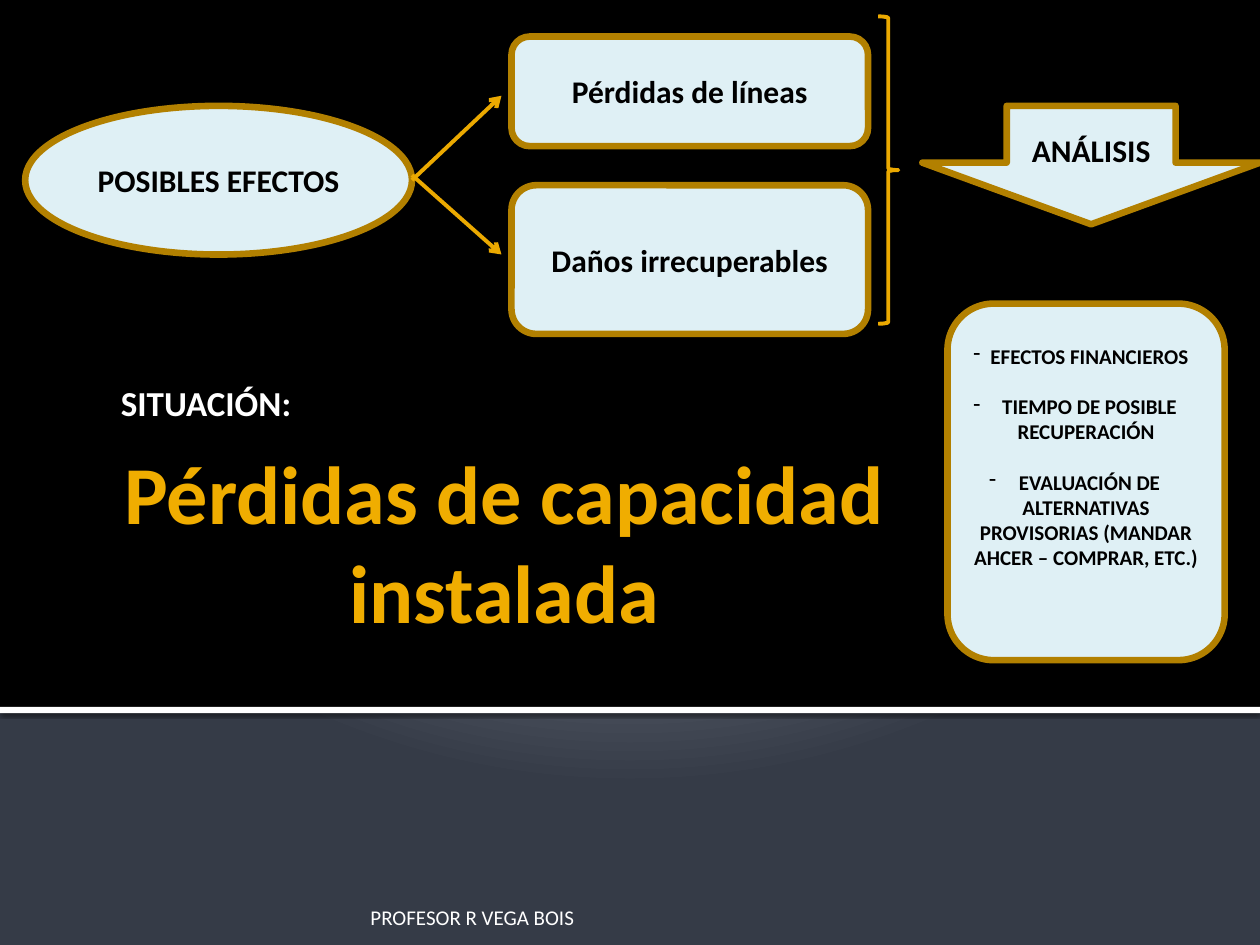
"""Build the slide on loss of installed capacity and its possible effects."""
import pptx
import pptx.dml.color
import pptx.enum.shapes
import pptx.enum.text
import pptx.oxml
import pptx.util
from pptx.util import Inches

COLORS = {
    "black": "000000", "white": "FFFFFF", "pale": "DFF0F5", "bronze": "B28000",
    "gold": "EBA900", "title": "F0AD00",
}
GRADIENT = [(0, "C1C5D3"), (12, "C1C5D3"), (20, "BFC4D2"), (100, "353B47")]
SHAPE = pptx.enum.shapes.MSO_SHAPE
ALIGN = pptx.enum.text.PP_ALIGN
ANCHOR = pptx.enum.text.MSO_ANCHOR
NAMESPACE = 'xmlns:a="http://schemas.openxmlformats.org/drawingml/2006/main"'


def rgb(name):
    return pptx.dml.color.RGBColor.from_string(COLORS[name])


def element(xml):
    """Parse a drawing element written without its namespace declaration."""
    head, mark, rest = xml.partition(">")
    if head.endswith("/"):
        head, mark = head[:-1], "/>"
    return pptx.oxml.parse_xml(f"{head} {NAMESPACE}{mark}{rest}")


def set_background(page):
    fill = page.background.fill
    fill.solid()
    solid = page.background._cSld.bg.bgPr[0]
    stops = "".join(
        f'<a:gs pos="{place * 1000}"><a:srgbClr val="{color}"/></a:gs>'
        for place, color in GRADIENT
    )
    gradient = element(
        f'<a:gradFill><a:gsLst>{stops}</a:gsLst><a:path path="circle">'
        '<a:fillToRect l="10000" t="-25000" r="10000" b="125000"/>'
        "</a:path></a:gradFill>"
    )
    solid.getparent().replace(solid, gradient)


def write_text(box, text, size=18, color="black", bold=True, align=ALIGN.CENTER,
               anchor=ANCHOR.MIDDLE, insets=(0.1, 0.05, 0.1, 0.05), bullet=None, gap=0):
    """Fill a box with one paragraph per line of text."""
    frame = box.text_frame
    frame.word_wrap = True
    frame.vertical_anchor = anchor
    (frame.margin_left, frame.margin_top,
     frame.margin_right, frame.margin_bottom) = map(Inches, insets)
    for index, line in enumerate(text.split("\n")):
        para = frame.add_paragraph() if index else frame.paragraphs[0]
        para.alignment = align
        if index and gap:
            para.space_before = pptx.util.Pt(gap)
        if bullet:
            para._p.get_or_add_pPr().append(element(f'<a:buChar char="{bullet}"/>'))
        span = para.add_run()
        span.text = line
        span.font.name = "Calibri"
        span.font.size = pptx.util.Pt(size)
        span.font.bold = bold
        span.font.color.rgb = rgb(color)


def add_shape(page, kind, place, fill=None, line=None, width=3.78):
    shape = page.shapes.add_shape(kind, *map(Inches, place))
    shape.shadow.inherit = False
    if fill:
        shape.fill.solid()
        shape.fill.fore_color.rgb = rgb(fill)
    else:
        shape.fill.background()
    if line:
        shape.line.color.rgb = rgb(line)
        shape.line.width = pptx.util.Pt(width)
    else:
        shape.line.fill.background()
    return shape


def add_node(page, kind, place, text, **style):
    node = add_shape(page, kind, place, "pale", "bronze")
    write_text(node, text, **style)
    return node


def add_label(page, place, text, **style):
    write_text(page.shapes.add_textbox(*map(Inches, place)), text, **style)


def add_arrow(page, start, end):
    arrow = page.shapes.add_connector(
        pptx.enum.shapes.MSO_CONNECTOR.STRAIGHT, *map(Inches, start + end))
    arrow.line.color.rgb = rgb("gold")
    arrow.line.width = pptx.util.Pt(2.25)
    arrow.line._get_or_add_ln().append(element('<a:tailEnd type="arrow"/>'))
    arrow._element.spPr.append(element("<a:effectLst/>"))


def add_panel(page):
    """Draw the upper black panel and its shadowed white edge."""
    add_shape(page, SHAPE.RECTANGLE, (0, 0, 10, 5.62), "black")
    edge = add_shape(page, SHAPE.RECTANGLE, (0, 5.61, 10, 0.05), "white")
    edge._element.spPr.find(pptx.oxml.ns.qn("a:effectLst")).append(element(
        '<a:outerShdw blurRad="31750" dist="10160" dir="5400000">'
        '<a:srgbClr val="000000"><a:alpha val="60000"/></a:srgbClr></a:outerShdw>'
    ))


def main():
    deck = pptx.Presentation()
    deck.slide_width, deck.slide_height = Inches(10), Inches(7.5)
    page = deck.slides.add_slide(deck.slide_layouts[6])
    set_background(page)
    add_panel(page)

    add_label(page, (0.75, 3.51, 6.46, 1.83), "Pérdidas de capacidad instalada",
              size=47, color="title", anchor=ANCHOR.TOP, insets=(0.1, 0, 0.05, 0))
    add_label(page, (0.83, 2.73, 8.83, 0.63), "SITUACIÓN:", size=20, color="white",
              align=ALIGN.LEFT, anchor=ANCHOR.BOTTOM, insets=(0.13, 0, 0.05, 0))
    add_label(page, (2.89, 7.08, 6.02, 0.3), "PROFESOR R VEGA BOIS", size=12,
              color="white", bold=False, align=ALIGN.LEFT, anchor=ANCHOR.BOTTOM,
              insets=(0.05, 0.05, 0.05, 0))

    add_node(page, SHAPE.OVAL, (0.2, 0.84, 3.07, 1.18), "POSIBLES EFECTOS")
    add_node(page, SHAPE.ROUNDED_RECTANGLE, (4.06, 0.29, 2.83, 0.87), "Pérdidas de líneas")
    add_node(page, SHAPE.ROUNDED_RECTANGLE, (4.06, 1.47, 2.83, 1.18), "Daños irrecuperables")
    analysis = add_node(page, SHAPE.DOWN_ARROW, (7.32, 0.84, 2.68, 0.94), "ANÁLISIS")
    analysis.adjustments[1] = 0.52
    add_node(page, SHAPE.ROUNDED_RECTANGLE, (7.52, 2.41, 2.2, 2.83),
             "EFECTOS FINANCIEROS\nTIEMPO DE POSIBLE RECUPERACIÓN\n"
             "EVALUACIÓN DE ALTERNATIVAS PROVISORIAS (MANDAR AHCER – COMPRAR, ETC.)",
             size=12, bullet="-", gap=14.4, insets=(0.1, 0.05, 0.1, 0.45))

    add_arrow(page, (3.27, 1.43), (3.98, 0.76))
    add_arrow(page, (3.27, 1.39), (3.98, 2.02))
    add_shape(page, SHAPE.RIGHT_BRACE, (6.97, 0.13, 0.16, 2.44), line="gold", width=2.25)
    deck.save("out.pptx")


if __name__ == "__main__":
    main()
